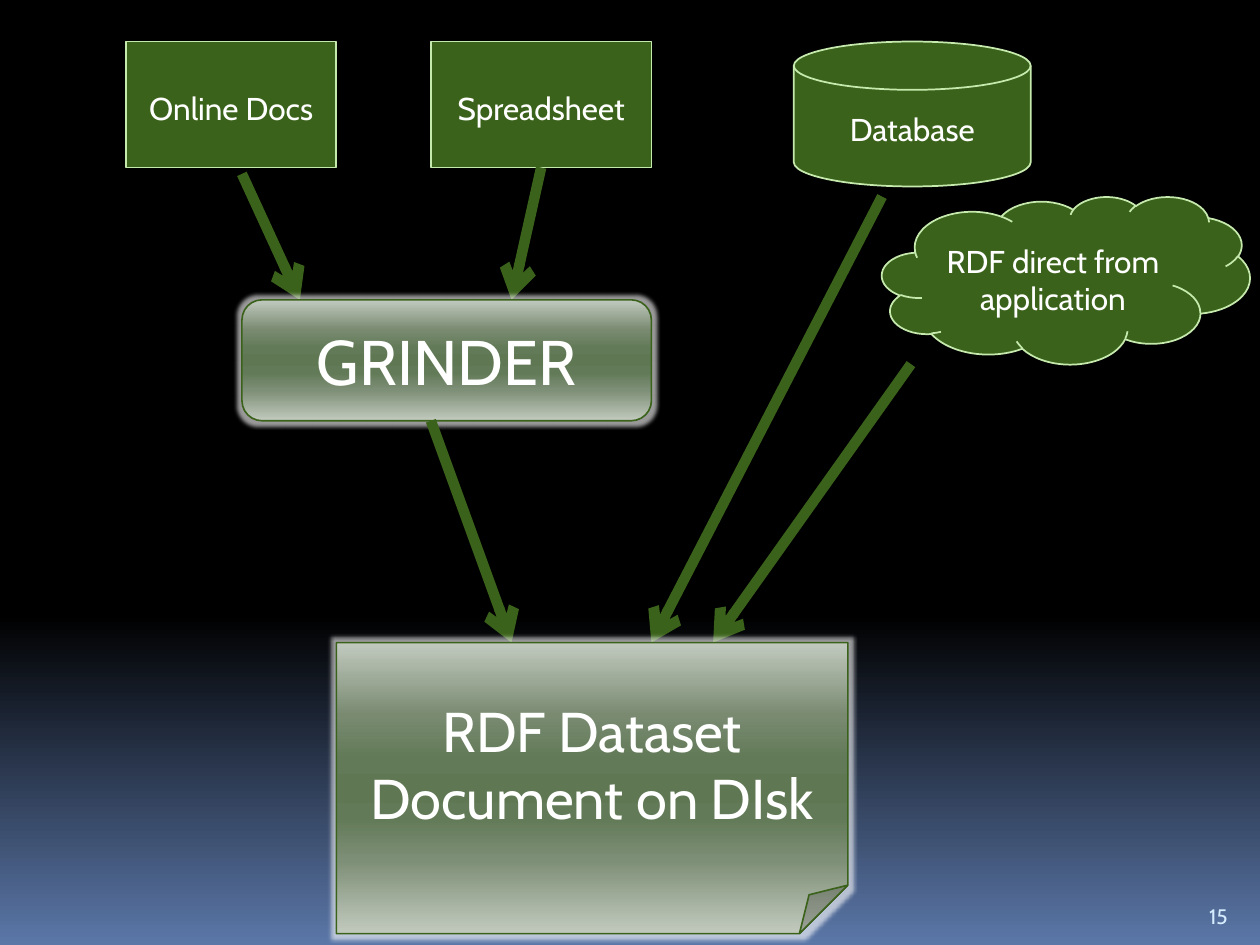
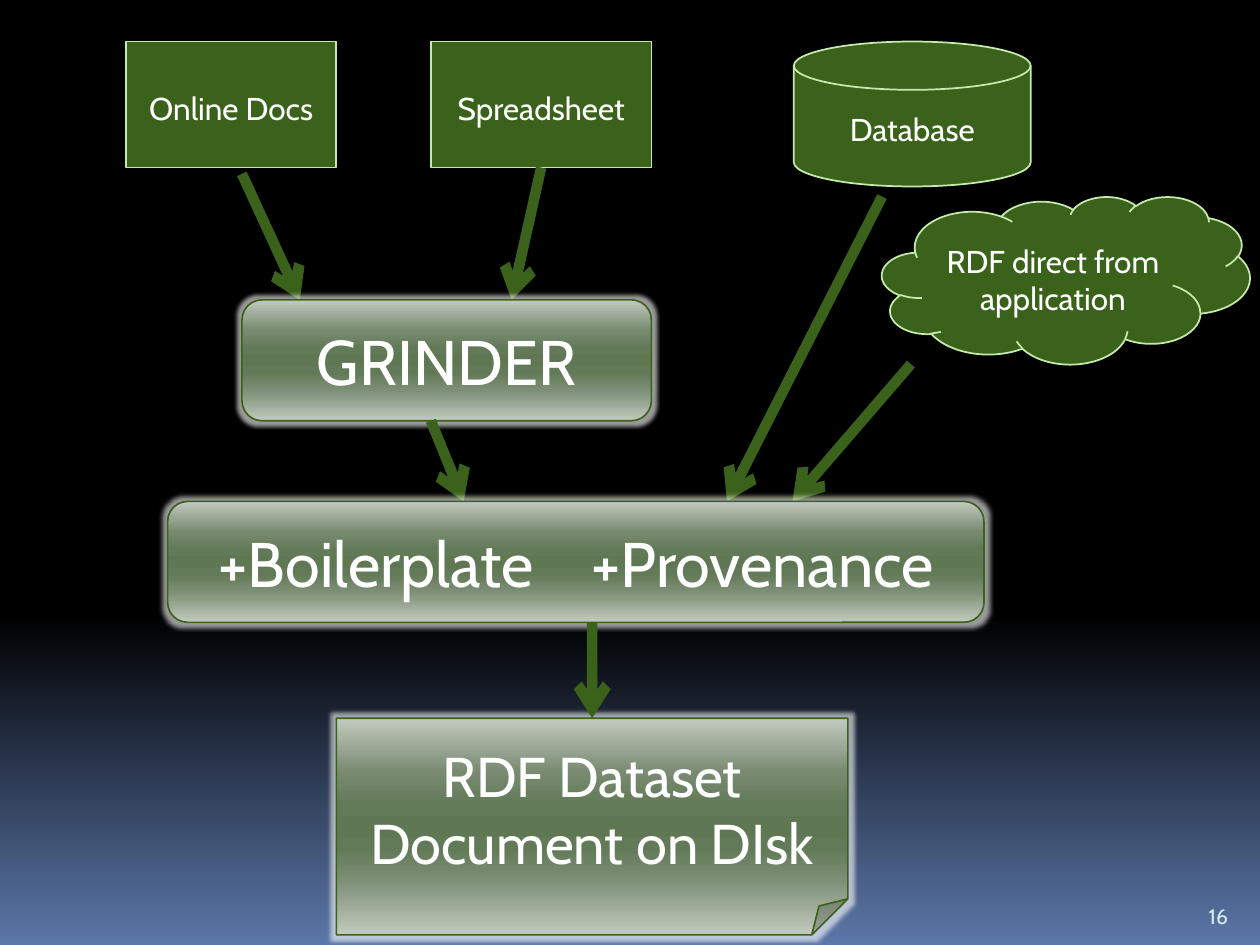
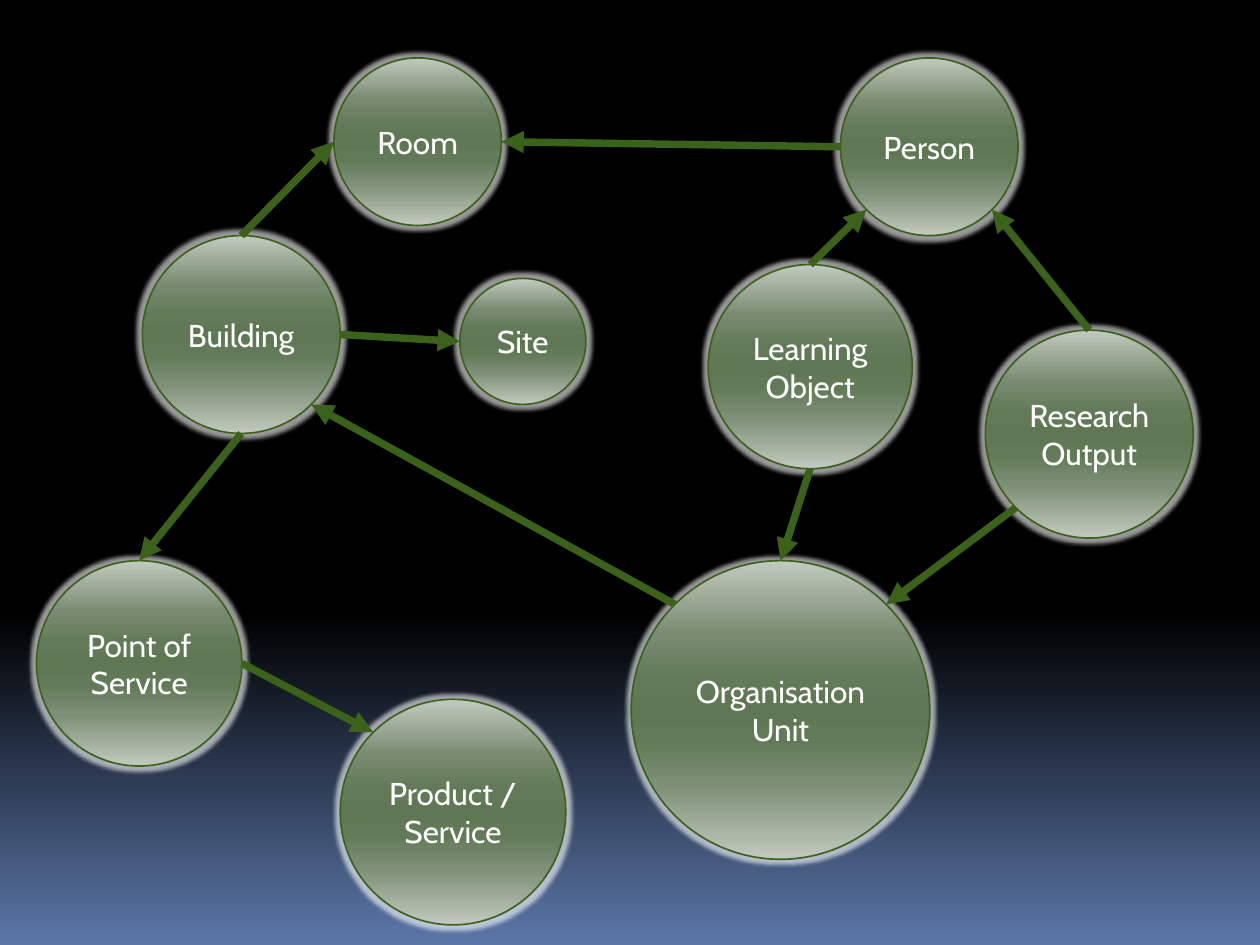
"""Builds three slides on turning source data into an RDF dataset."""
import math

from lxml import etree
from pptx import Presentation
from pptx import util as u
from pptx.dml.color import RGBColor
from pptx.enum import shapes, text
from pptx.oxml.ns import qn

COLOURS = {
    "green": "3B621B",
    "outline": "C6EAAD",
    "white": "FFFFFF",
    "number": "D6ECFF",
}
SKY = [(0, "000000"), (65, "000000"), (100, "5B77A8")]
GLASS = [(0, "C2CABF"), (25, "798A71"), (40, "627A57"), (50, "5F7753"),
         (60, "627A57"), (75, "7E8F77"), (100, "C2CABE")]
FONT = "Cabin"
KIND = shapes.MSO_SHAPE
COMPASS = {side: math.radians(45 * step) for step, side in
           enumerate(["E", "SE", "S", "SW", "W", "NW", "N", "NE"])}

ENTITIES = {
    "Building": (1.13, 1.87, 1.57),
    "Site": (3.65, 2.21, 1),
    "Person": (6.67, 0.46, 1.41),
    "Product / Service": (2.7, 5.55, 1.79),
    "Research Output": (7.82, 2.62, 1.65),
    "Learning Object": (5.62, 2.1, 1.62),
    "Organisation Unit": (5.01, 4.45, 2.37),
    "Point of Service": (0.29, 4.45, 1.63),
    "Room": (2.65, 0.46, 1.33),
}
RELATIONS = [
    ("Building", "E", "Site", "W"),
    ("Organisation Unit", "NW", "Building", "SE"),
    ("Building", "S", "Point of Service", "N"),
    ("Building", "N", "Room", "W"),
    ("Point of Service", "E", "Product / Service", "NW"),
    ("Research Output", "SW", "Organisation Unit", "NE"),
    ("Learning Object", "S", "Organisation Unit", "N"),
    ("Research Output", "N", "Person", "SE"),
    ("Learning Object", "N", "Person", "SW"),
    ("Person", "W", "Room", "E"),
]


def colour(name):
    """Return the named colour."""
    return RGBColor.from_string(COLOURS[name])


def inches(values):
    """Turn numbers into lengths."""
    return [u.Inches(value) for value in values]


def set_gradient(fill, owner, stops):
    """Give a fill a top-to-bottom gradient."""
    fill.gradient()
    fill.gradient_angle = 270
    stop_list = next(owner.iter(qn("a:gsLst")))
    for old_stop in list(stop_list):
        stop_list.remove(old_stop)
    for percent, value in stops:
        stop = etree.SubElement(stop_list, qn("a:gs"), pos=str(percent * 1000))
        etree.SubElement(stop, qn("a:srgbClr"), val=value)


def write(frame, words, size, font_colour="white"):
    """Put one centred paragraph in a text frame."""
    frame.word_wrap = True
    frame.text = words
    paragraph = frame.paragraphs[0]
    paragraph.alignment = text.PP_ALIGN.CENTER
    paragraph.font.size = u.Pt(size)
    paragraph.font.name = FONT
    paragraph.font.color.rgb = colour(font_colour)
    return paragraph


def add_node(slide, kind, box, words, size, outline, width):
    """Add an outlined shape with a centred label."""
    node = slide.shapes.add_shape(kind, *inches(box))
    node.shadow.inherit = False
    node.line.color.rgb = colour(outline)
    node.line.width = u.Pt(width)
    node.text_frame.vertical_anchor = text.MSO_ANCHOR.MIDDLE
    write(node.text_frame, words, size)
    return node


def add_source(slide, kind, box, words):
    """Add a flat green data source."""
    source = add_node(slide, kind, box, words, 18, "outline", 1)
    source.fill.solid()
    source.fill.fore_color.rgb = colour("green")
    source.text_frame.margin_bottom = 0
    return source


def add_glass(slide, kind, box, words, size):
    """Add a glossy shape with a soft white glow."""
    glass = add_node(slide, kind, box, words, size, "green", 0.94)
    set_gradient(glass.fill, glass.element, GLASS)
    effects = next(glass.element.iter(qn("a:effectLst")))
    glow = etree.SubElement(effects, qn("a:glow"), rad=str(u.Pt(5)))
    tint = etree.SubElement(glow, qn("a:srgbClr"), val=COLOURS["white"])
    etree.SubElement(tint, qn("a:alpha"), val="60000")
    return glass


def add_arrow(slide, start, end, width=6, head="arrow"):
    """Add a straight green arrow."""
    arrow = slide.shapes.add_connector(
        shapes.MSO_CONNECTOR.STRAIGHT, *inches((*start, *end)))
    arrow.line.color.rgb = colour("green")
    arrow.line.width = u.Pt(width)
    etree.SubElement(arrow.line._get_or_add_ln(), qn("a:tailEnd"), type=head)
    etree.SubElement(arrow.element.spPr, qn("a:effectLst"))
    return arrow


def add_number(slide, box, number):
    """Add the page number."""
    page = slide.shapes.add_textbox(*inches(box)).text_frame
    page.vertical_anchor = text.MSO_ANCHOR.BOTTOM
    write(page, str(number), 12, "number")


def draw_sources(slide, box, feed_ends):
    """Draw the four sources, the grinder and the arrows between them."""
    left, top = box[:2]

    def at(x, y):
        return left + x, top + y

    add_source(slide, KIND.RECTANGLE, (*at(0, 0), 1.67, 1), "Online Docs")
    spreadsheet = add_source(
        slide, KIND.RECTANGLE, (*at(2.42, 0), 1.75, 1), "Spreadsheet")
    add_arrow(slide, at(6, 1.23), feed_ends[0])
    add_arrow(slide, at(3.29, 1), at(3.06, 2.05)).begin_connect(spreadsheet, 2)
    add_arrow(slide, at(0.92, 1.05), at(1.38, 2.05))
    add_source(slide, KIND.CLOUD, (*at(6, 1.23), 2.92, 1.33),
               "RDF direct from application")
    add_source(slide, KIND.FLOWCHART_MAGNETIC_DISK,
               (*at(5.3, 0), 1.88, 1.15), "Database")
    add_arrow(slide, at(6.23, 2.56), feed_ends[1])
    add_glass(slide, KIND.FLOWCHART_ALTERNATE_PROCESS,
              (*at(0.92, 2.05), 3.25, 0.96), "GRINDER", 36)
    add_arrow(slide, at(2.42, 3.01), feed_ends[2])


def draw_dataset(slide, box):
    """Draw the document that the flow ends in."""
    return add_glass(slide, KIND.FOLDED_CORNER, box,
                     "RDF Dataset Document on DIsk", 32)


def draw_additions(slide, box, dataset):
    """Draw the band of additions and its arrow to the dataset."""
    left, top, _, height = box
    band = add_glass(slide, KIND.FLOWCHART_ALTERNATE_PROCESS, box,
                     "+Boilerplate\t+Provenance", 36)
    band.text_frame.margin_left = u.Inches(0.36)
    paragraph = band.text_frame.paragraphs[0]
    paragraph.alignment = text.PP_ALIGN.LEFT
    tabs = etree.Element(qn("a:tabLst"))
    etree.SubElement(tabs, qn("a:tab"), pos=str(u.Inches(2.96)), algn="l")
    next(paragraph._p.iter(qn("a:pPr"))).insert(0, tabs)
    centre = left + 3.37
    arrow = add_arrow(slide, (centre, top + height), (centre, top + 1.72))
    arrow.end_connect(dataset, 0)


def draw_entities(slide, box):
    """Draw the circles and the relations between them."""
    left, top = box[:2]

    def rim(entity, side):
        x, y, size = ENTITIES[entity]
        radius, angle = size / 2, COMPASS[side]
        return (left + x + radius * (1 + math.cos(angle)),
                top + y + radius * (1 + math.sin(angle)))

    for entity, (x, y, size) in ENTITIES.items():
        add_glass(slide, KIND.OVAL, (left + x, top + y, size, size), entity, 18)
    for origin, exit_side, target, entry_side in RELATIONS:
        add_arrow(slide, rim(origin, exit_side), rim(target, entry_side),
                  4.25, "triangle")


def main():
    """Build and save the three slides."""
    deck = Presentation()
    deck.slide_width, deck.slide_height = inches((10, 7.5))
    master = deck.slide_master
    set_gradient(master.background.fill, master.element, SKY)
    direct, enriched, model = [
        deck.slides.add_slide(deck.slide_layouts[6]) for _ in range(3)]

    sources_box = (1, 0.33, 8.92, 3.01)
    for number, slide in enumerate((direct, enriched), 15):
        add_number(slide, (9.42, 7.02, 0.5, 0.4), number)

    draw_sources(direct, sources_box, [(5.17, 5.1), (5.66, 5.1), (4.06, 5.1)])
    draw_dataset(direct, (2.67, 5.1, 4.06, 2.31))

    draw_sources(enriched, sources_box,
                 [(5.77, 3.98), (6.29, 3.98), (3.68, 3.98)])
    dataset = draw_dataset(enriched, (2.67, 5.7, 4.06, 1.72))
    draw_additions(enriched, (1.33, 3.98, 6.48, 0.96), dataset)

    draw_entities(model, (0, 0, 10, 7.5))
    deck.save("out.pptx")


if __name__ == "__main__":
    main()
